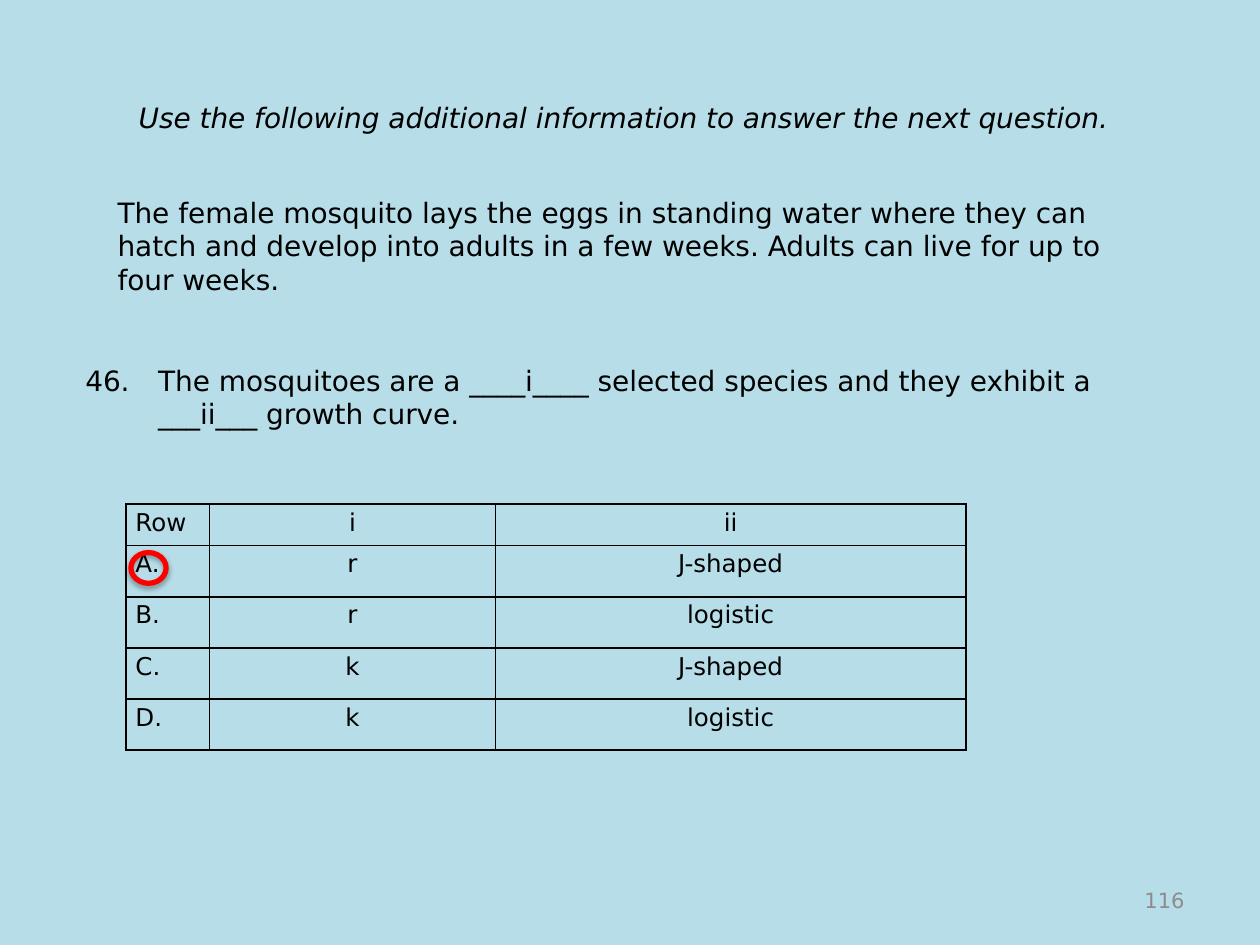
from dataclasses import dataclass

from lxml.etree import SubElement
from pptx import Presentation
from pptx.dml.color import RGBColor
from pptx.enum.shapes import MSO_SHAPE
from pptx.enum.text import MSO_ANCHOR, MSO_AUTO_SIZE, PP_ALIGN
from pptx.oxml.ns import qn
from pptx.util import Cm, Pt

FONT = "DejaVu Sans"
BACKGROUND = RGBColor(0xB7, 0xDE, 0xE8)
BLACK = RGBColor(0x00, 0x00, 0x00)
GREY = RGBColor(0x8C, 0x8C, 0x8C)
RED = RGBColor(0xFF, 0x00, 0x00)


@dataclass
class TextBlock:
    text: str
    left: float
    top: float
    width: float
    height: float
    size: int = 16
    color: RGBColor = BLACK
    italic: bool = False
    align: PP_ALIGN = PP_ALIGN.LEFT
    anchor: MSO_ANCHOR = MSO_ANCHOR.TOP
    hanging: float = 0


INSTRUCTION = TextBlock(
    "Use the following additional information to answer the next question.",
    2.54, 1.9, 21.17, 0.94, italic=True)
CONTEXT = TextBlock(
    "The female mosquito lays the eggs in standing water where they can hatch "
    "and develop into adults in a few weeks. Adults can live for up to four weeks.",
    2.12, 3.81, 21.59, 2.3)
QUESTION = TextBlock(
    "46.\tThe mosquitoes are a ____i____ selected species and they exhibit a "
    "___ii___ growth curve.",
    1.47, 7.2, 22.01, 1.63, hanging=1.47)
PAGE_NUMBER = TextBlock("116", 18.2, 17.65, 5.93, 1.01, size=12, color=GREY,
                        align=PP_ALIGN.RIGHT, anchor=MSO_ANCHOR.MIDDLE)

ANSWERS = [
    ("Row", "i", "ii"),
    ("A.", "r", "J-shaped"),
    ("B.", "r", "logistic"),
    ("C.", "k", "J-shaped"),
    ("D.", "k", "logistic"),
]
COLUMN_WIDTHS = (1.68, 5.77, 9.48)
HEADER_HEIGHT, ANSWER_HEIGHT = 0.84, 1.03


def add_run(p, text: str, size: int, color: RGBColor, italic: bool = False) -> None:
    r = p.add_run()
    r.text = text
    r.font.name = FONT
    r.font.size = Pt(size)
    r.font.italic = italic
    r.font.color.rgb = color


def fill_text(sp, block: TextBlock) -> None:
    """Place a text box or placeholder and write the block into it."""
    sp.left, sp.top = Cm(block.left), Cm(block.top)
    sp.width, sp.height = Cm(block.width), Cm(block.height)
    tf = sp.text_frame
    tf.word_wrap = True
    tf.auto_size = MSO_AUTO_SIZE.NONE
    tf.vertical_anchor = block.anchor
    p = tf.paragraphs[0]
    p.alignment = block.align
    if block.hanging:
        pPr = p._p.get_or_add_pPr()
        pPr.set("marL", str(Cm(block.hanging)))
        pPr.set("indent", str(-Cm(block.hanging)))
    add_run(p, block.text, block.size, block.color, block.italic)


def add_text(s, block: TextBlock) -> None:
    fill_text(s.shapes.add_textbox(0, 0, 0, 0), block)


def set_borders(cell, color: RGBColor, width: Pt) -> None:
    tcPr = cell._tc.get_or_add_tcPr()
    for side in ("a:lnL", "a:lnR", "a:lnT", "a:lnB"):
        ln = SubElement(tcPr, qn(side), w=str(width))
        fill = SubElement(ln, qn("a:solidFill"))
        SubElement(fill, qn("a:srgbClr"), val=str(color))


def add_answer_table(s, left: float, top: float) -> None:
    heights = [HEADER_HEIGHT] + [ANSWER_HEIGHT] * (len(ANSWERS) - 1)
    table = s.shapes.add_table(
        len(ANSWERS), len(COLUMN_WIDTHS), Cm(left), Cm(top),
        Cm(sum(COLUMN_WIDTHS)), Cm(sum(heights))).table
    table.first_row = table.horz_banding = False
    for column, width in zip(table.columns, COLUMN_WIDTHS):
        column.width = Cm(width)
    for row, height, texts in zip(table.rows, heights, ANSWERS):
        row.height = Cm(height)
        for i, (cell, text) in enumerate(zip(row.cells, texts)):
            cell.margin_left = cell.margin_right = Cm(0.19)
            cell.margin_top = cell.margin_bottom = 0
            set_borders(cell, BLACK, Pt(1))
            cell.fill.background()
            p = cell.text_frame.paragraphs[0]
            p.alignment = PP_ALIGN.CENTER if i else PP_ALIGN.LEFT
            p.line_spacing = 1.15
            add_run(p, text, 14, BLACK)


def add_answer_ring(s, left: float, top: float, width: float, height: float) -> None:
    ring = s.shapes.add_shape(MSO_SHAPE.OVAL, Cm(left), Cm(top), Cm(width), Cm(height))
    ring.fill.background()
    ring.line.color.rgb = RED
    ring.line.width = Pt(3)
    effects = SubElement(ring._element.spPr, qn("a:effectLst"))
    shadow = SubElement(effects, qn("a:outerShdw"), blurRad=str(Pt(3.1)),
                        dist=str(Pt(1.8)), dir="5400000", rotWithShape="0")
    color = SubElement(shadow, qn("a:srgbClr"), val=str(BLACK))
    SubElement(color, qn("a:alpha"), val="35000")


def main() -> None:
    prs = Presentation()
    prs.slide_width, prs.slide_height = Cm(25.4), Cm(19.05)
    s = prs.slides.add_slide(prs.slide_layouts.get_by_name("Title Only"))
    s.background.fill.solid()
    s.background.fill.fore_color.rgb = BACKGROUND

    fill_text(s.shapes.title, INSTRUCTION)
    for block in (PAGE_NUMBER, CONTEXT, QUESTION):
        add_text(s, block)
    add_answer_table(s, 2.54, 10.16)
    add_answer_ring(s, 2.64, 11.14, 0.71, 0.62)
    prs.save("out.pptx")


if __name__ == "__main__":
    main()
